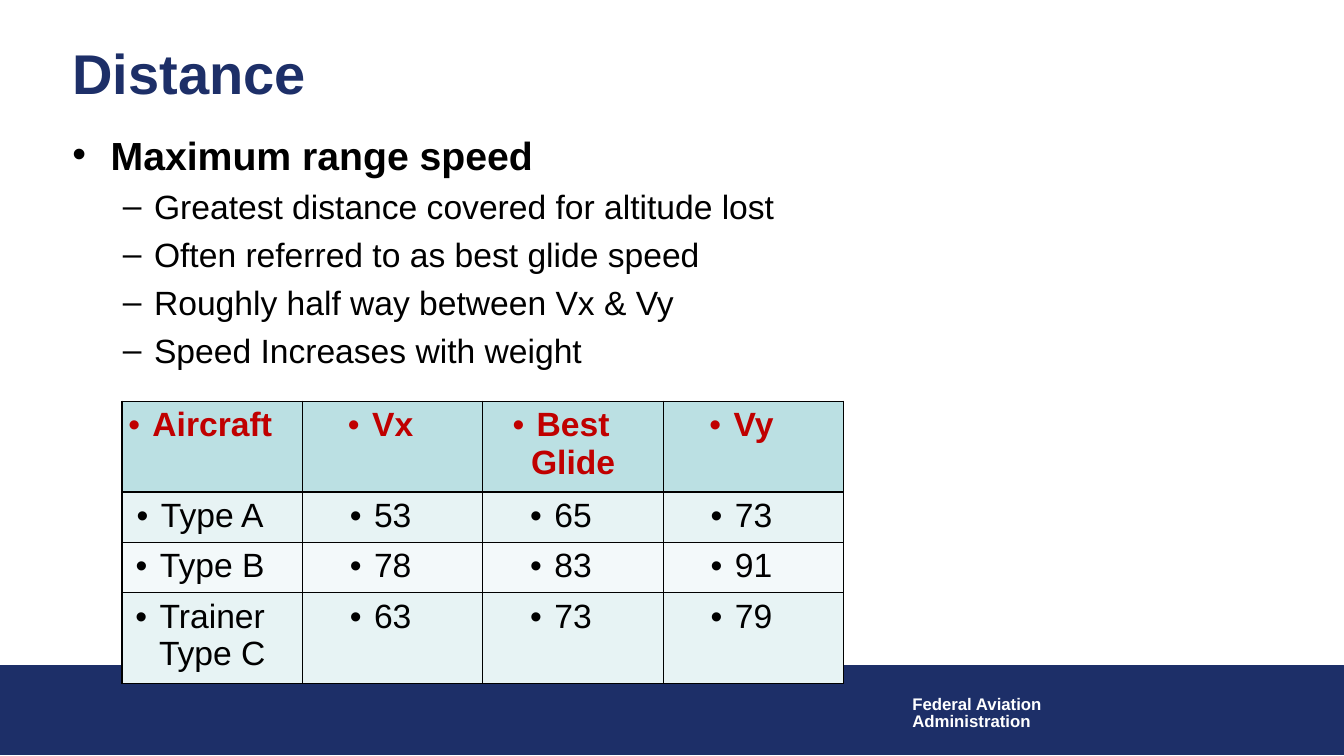
import pptx
import pptx.enum.shapes
import pptx.enum.text
import pptx.oxml
import pptx.oxml.ns
import pptx.util
from pptx.dml.color import RGBColor
from pptx.util import Inches, Pt

# Content
TITLE = "Distance"
BULLETS = [
    (0, "Maximum range speed"),
    (1, "Greatest distance covered for altitude lost"),
    (1, "Often referred to as best glide speed"),
    (1, "Roughly half way between Vx & Vy"),
    (1, "Speed Increases with weight"),
]
SPEEDS = [
    ("Aircraft", "Vx", "Best Glide", "Vy"),
    ("Type A", "53", "65", "73"),
    ("Type B", "78", "83", "91"),
    ("Trainer Type C", "63", "73", "79"),
]
FOOTER = ["Federal Aviation", "Administration"]

# Style
FONT = "Arial"
COLORS = {"navy": "1D2F68", "white": "FFFFFF", "black": "000000", "red": "C00000",
          "header": "BBE0E3", "odd": "E7F3F4", "even": "F3F9FA"}
# Per level: bullet, left margin, hanging indent, size, bold
LEVELS = [("•", 0.38, 0.38, 28, True), ("–", 0.81, 0.31, 24, False)]
COLUMN_WIDTH, ROW_HEIGHT = 1.79, 0.5
CELL_INDENT = 0.24


def color(name):
    return RGBColor.from_string(COLORS[name])


def style(para, size, color_name, bold):
    for span in para.runs:
        span.font.name = FONT
        span.font.size = Pt(size)
        span.font.bold = bold
        span.font.color.rgb = color(color_name)


def add_bullet(para, char, left, hanging):
    properties = para._p.get_or_add_pPr()
    properties.set("marL", str(Inches(left)))
    properties.set("indent", str(-Inches(hanging)))
    namespace = pptx.oxml.ns.nsdecls("a")
    for element in (f'<a:buFont {namespace} typeface="{FONT}"/>',
                    f'<a:buChar {namespace} char="{char}"/>'):
        properties.append(pptx.oxml.parse_xml(element))


def add_borders(cell):
    properties = cell._tc.get_or_add_tcPr()
    for position, side in enumerate(("lnL", "lnR", "lnT", "lnB")):
        border = pptx.oxml.parse_xml(
            f'<a:{side} {pptx.oxml.ns.nsdecls("a")} w="{Pt(1)}"><a:solidFill>'
            f'<a:srgbClr val="{COLORS["black"]}"/></a:solidFill></a:{side}>')
        properties.insert(position, border)


deck = pptx.Presentation()
deck.slide_width, deck.slide_height = Inches(13.33), Inches(7.5)
page = deck.slides.add_slide(deck.slide_layouts[5])

# Footer band
band = page.shapes.add_shape(pptx.enum.shapes.MSO_SHAPE.RECTANGLE,
                             0, Inches(6.6), deck.slide_width, Inches(0.89))
band.shadow.inherit = False
band.fill.solid()
band.fill.fore_color.rgb = color("navy")
band.line.color.rgb = color("navy")
band.line.width = Pt(0.75)

agency = page.shapes.add_textbox(Inches(8.95), Inches(6.86), Inches(1.5), Inches(0.44))
agency.text_frame.text = "\n".join(FOOTER)
agency.text_frame.word_wrap = False
for para in agency.text_frame.paragraphs:
    para.line_spacing = 0.85
    style(para, 12, "white", True)

# Title
title = page.shapes.title
title.left, title.top = Inches(0.62), Inches(0.38)
title.width, title.height = Inches(12.35), Inches(0.67)
title.text_frame.text = TITLE
title.text_frame.auto_size = pptx.enum.text.MSO_AUTO_SIZE.NONE
title.text_frame.vertical_anchor = pptx.enum.text.MSO_ANCHOR.MIDDLE
heading = title.text_frame.paragraphs[0]
heading.alignment = pptx.enum.text.PP_ALIGN.LEFT
style(heading, 40, "navy", True)

# Bullet list
body = page.shapes.add_textbox(Inches(0.62), Inches(1.25), Inches(11.74), Inches(4.8))
body.text_frame.word_wrap = True
body.text_frame.text = "\n".join(text for level, text in BULLETS)
for index, para in enumerate(body.text_frame.paragraphs):
    level = BULLETS[index][0]
    char, left, hanging, size, bold = LEVELS[level]
    add_bullet(para, char, left, hanging)
    para.level = level
    if index:
        para.space_before = Pt(5.5)
    style(para, size, "black", bold)

# Speed table
row_count, column_count = len(SPEEDS), len(SPEEDS[0])
table = page.shapes.add_table(
    row_count, column_count, Inches(1.21), Inches(3.98),
    Inches(COLUMN_WIDTH * column_count), Inches(ROW_HEIGHT * row_count)).table
for row, values in enumerate(SPEEDS):
    is_header = row == 0
    fill = "header" if is_header else "odd" if row % 2 else "even"
    for column, value in enumerate(values):
        cell = table.cell(row, column)
        cell.fill.solid()
        cell.fill.fore_color.rgb = color(fill)
        add_borders(cell)
        # The right margin balances the bullet indent, so text stays centred
        cell.margin_left, cell.margin_right = 0, Inches(CELL_INDENT)
        cell.text_frame.text = value
        para = cell.text_frame.paragraphs[0]
        add_bullet(para, "•", CELL_INDENT, CELL_INDENT)
        para.alignment = pptx.enum.text.PP_ALIGN.CENTER
        style(para, 24, "red" if is_header else "black", is_header)

deck.save("out.pptx")
